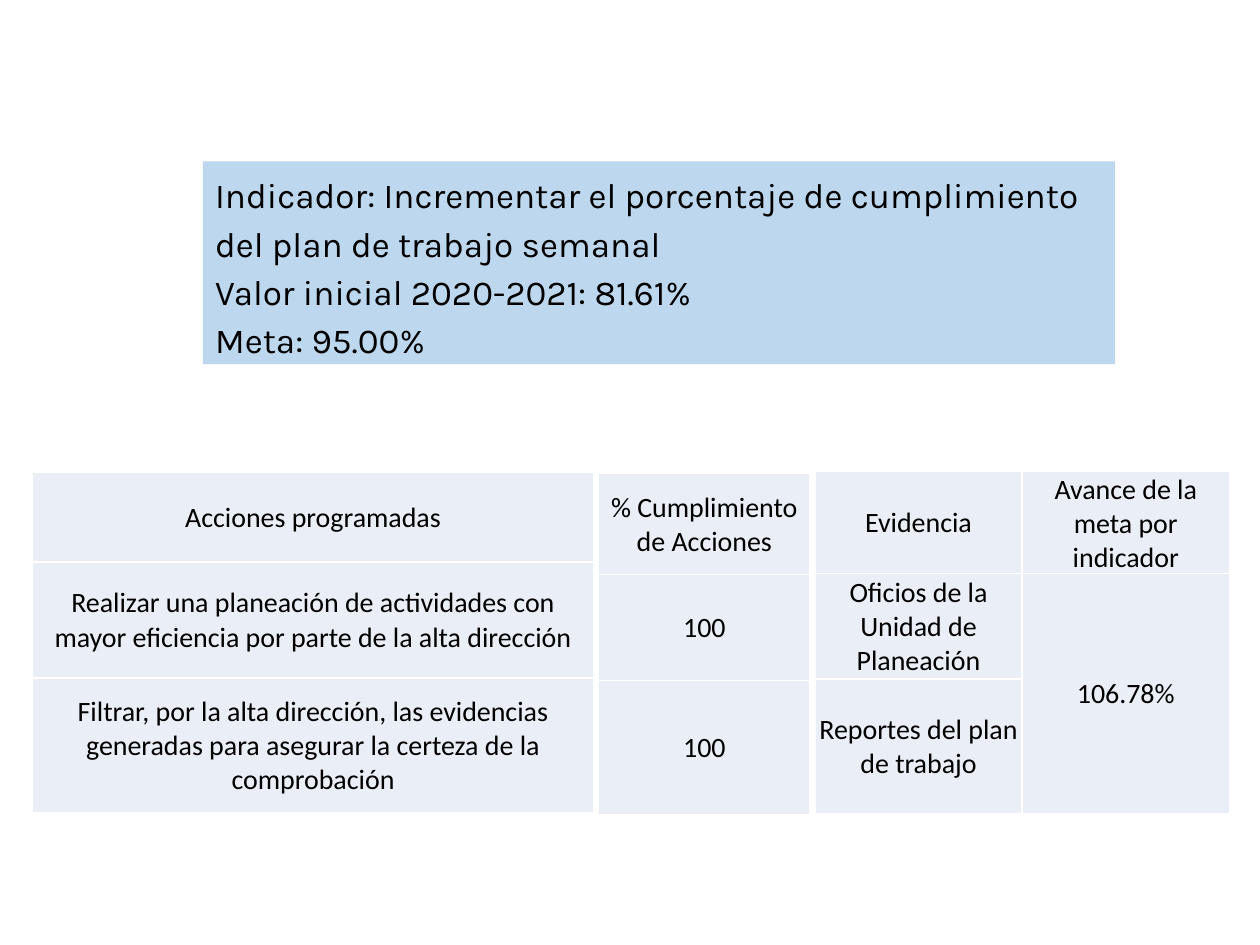
from dataclasses import dataclass

from lxml.etree import SubElement
from pptx import Presentation
from pptx.dml.color import RGBColor
from pptx.enum.shapes import MSO_SHAPE
from pptx.enum.text import MSO_ANCHOR, MSO_AUTO_SIZE, PP_ALIGN
from pptx.oxml.ns import qn
from pptx.util import Inches, Pt


@dataclass(frozen=True)
class Theme:
    """Colours, fonts and type sizes of the slide."""
    text: str = "000000"
    banner: str = "BDD7EE"
    cell: str = "EAEFF7"
    border: str = "FFFFFF"
    banner_font: str = "Karla"
    table_font: str = "Calibri"
    banner_size: int = 20
    table_size: int = 16
    border_width: int = 1


THEME = Theme()

INDICATOR_LINES = (
    "Indicador: Incrementar el porcentaje de cumplimiento del plan de trabajo semanal",
    "Valor inicial 2020-2021: 81.61%",
    "Meta: 95.00%",
)
ACTIONS = (
    ("Acciones programadas",),
    ("Realizar una planeación de actividades con mayor eficiencia por parte de la alta dirección",),
    ("Filtrar, por la alta dirección, las evidencias generadas para asegurar la certeza de la comprobación",),
)
COMPLIANCE = (("% Cumplimiento de Acciones",), ("100",), ("100",))
EVIDENCE = (
    ("Evidencia", "Avance de la meta por indicador"),
    ("Oficios de la Unidad de Planeación", "106.78%"),
    ("Reportes del plan de trabajo", ""),
)


def add_run(paragraph, text, font_name, size):
    """Add one formatted run to a paragraph."""
    run = paragraph.add_run()
    run.text = text
    run.font.name = font_name
    run.font.size = Pt(size)
    run.font.color.rgb = RGBColor.from_string(THEME.text)


def add_indicator_banner(slide, box):
    """Place the filled indicator box with its lines of text."""
    shape = slide.shapes.add_shape(MSO_SHAPE.RECTANGLE, *map(Inches, box))
    shape.shadow.inherit = False
    shape.fill.solid()
    shape.fill.fore_color.rgb = RGBColor.from_string(THEME.banner)
    shape.line.fill.background()
    frame = shape.text_frame
    frame.word_wrap = True
    frame.auto_size = MSO_AUTO_SIZE.SHAPE_TO_FIT_TEXT
    frame.vertical_anchor = MSO_ANCHOR.TOP
    for index, line in enumerate(INDICATOR_LINES):
        paragraph = frame.add_paragraph() if index else frame.paragraphs[0]
        paragraph.alignment = PP_ALIGN.LEFT
        paragraph.line_spacing = 1.15
        add_run(paragraph, line, THEME.banner_font, THEME.banner_size)


def add_borders(cell):
    """Draw the four borders of a table cell."""
    properties = cell._tc.get_or_add_tcPr()
    for side in ("a:lnL", "a:lnR", "a:lnT", "a:lnB"):
        line = SubElement(properties, qn(side), w=str(Pt(THEME.border_width)))
        fill = SubElement(line, qn("a:solidFill"))
        SubElement(fill, qn("a:srgbClr"), val=THEME.border)


def format_cell(cell, text):
    """Give a cell its borders, fill, margins and centred text."""
    add_borders(cell)
    cell.fill.solid()
    cell.fill.fore_color.rgb = RGBColor.from_string(THEME.cell)
    cell.margin_left = cell.margin_right = cell.margin_top = Inches(0.01)
    cell.margin_bottom = 0
    cell.vertical_anchor = MSO_ANCHOR.MIDDLE
    paragraph = cell.text_frame.paragraphs[0]
    paragraph.alignment = PP_ALIGN.CENTER
    if text:
        add_run(paragraph, text, THEME.table_font, THEME.table_size)


def add_progress_table(slide, box, column_widths, row_heights, contents):
    """Place one table of the progress report and return it."""
    frame = slide.shapes.add_table(len(row_heights), len(column_widths), *map(Inches, box))
    table = frame.table
    for column, width in zip(table.columns, column_widths):
        column.width = Inches(width)
    for row, height, texts in zip(table.rows, row_heights, contents):
        row.height = Inches(height)
        for cell, text in zip(row.cells, texts):
            format_cell(cell, text)
    return table


def main():
    """Build the indicator slide and save it."""
    presentation = Presentation()
    presentation.slide_width = Inches(10)
    presentation.slide_height = Inches(7.5)
    slide = presentation.slides.add_slide(presentation.slide_layouts[6])
    add_indicator_banner(slide, (1.61, 1.28, 7.24, 1.61))
    add_progress_table(slide, (0.26, 3.75, 4.45, 2.71), (4.45,), (0.71, 0.92, 1.07), ACTIONS)
    add_progress_table(slide, (4.75, 3.76, 1.68, 2.72), (1.68,), (0.8, 0.84, 1.07), COMPLIANCE)
    evidence = add_progress_table(
        slide, (6.47, 3.74, 3.29, 2.73), (1.64, 1.65), (0.73, 0.84, 1.07), EVIDENCE
    )
    evidence.cell(1, 1).merge(evidence.cell(2, 1))
    presentation.save("out.pptx")


if __name__ == "__main__":
    main()
